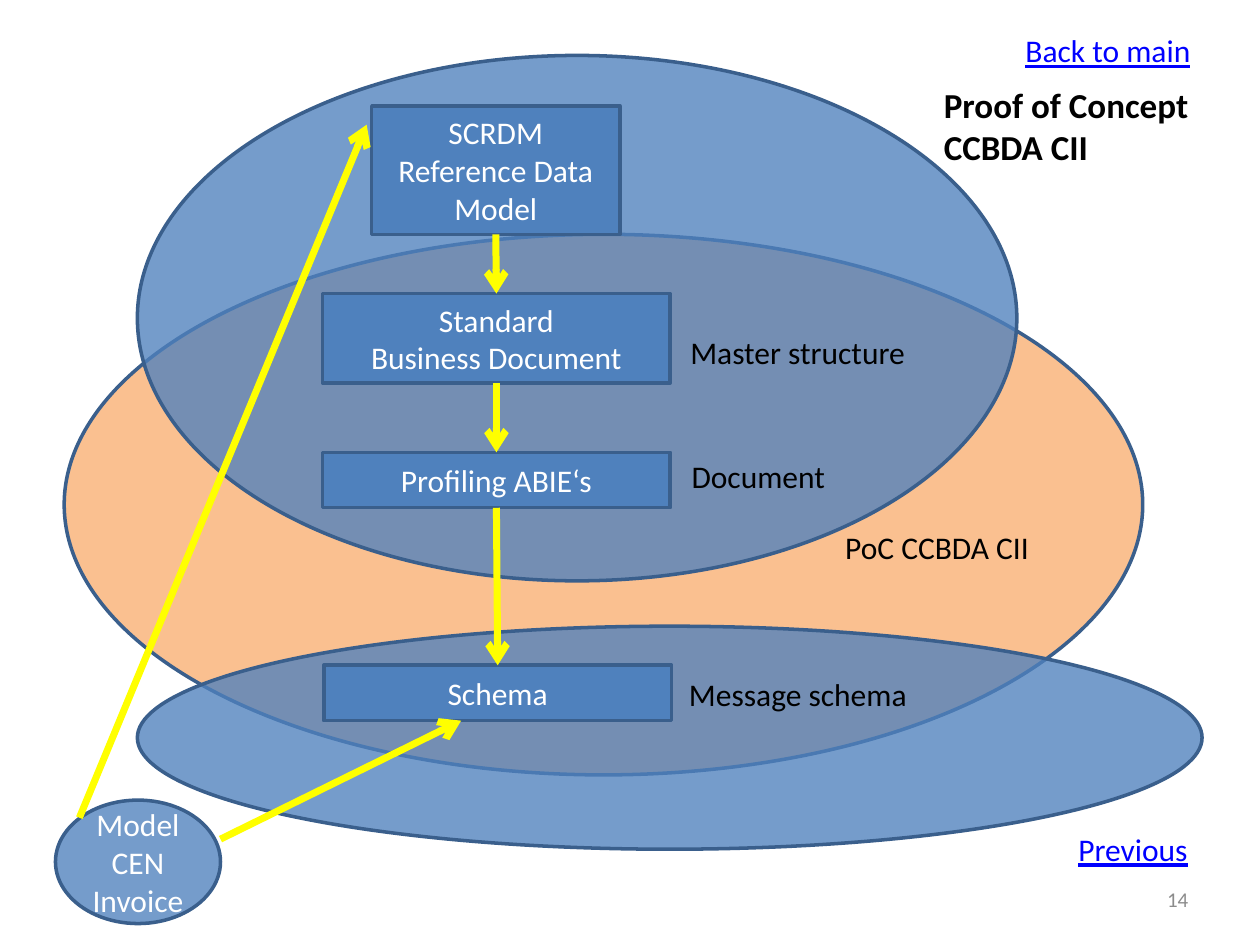
from lxml.etree import SubElement
from pptx import Presentation
from pptx.dml.color import RGBColor
from pptx.enum.shapes import MSO_CONNECTOR, MSO_SHAPE
from pptx.enum.text import MSO_ANCHOR, MSO_AUTO_SIZE, PP_ALIGN
from pptx.oxml.ns import qn
from pptx.util import Inches, Pt

FONT = "Calibri"
BLUE = RGBColor(0x4F, 0x81, 0xBD)
OUTLINE = RGBColor(0x3A, 0x5F, 0x8C)
ORANGE = RGBColor(0xFA, 0xC0, 0x90)
YELLOW = RGBColor(0xFF, 0xFF, 0x00)
LINK = RGBColor(0x00, 0x00, 0xFF)
GRAY = RGBColor(0x8C, 0x8C, 0x8C)
BLACK = RGBColor(0x00, 0x00, 0x00)
WHITE = RGBColor(0xFF, 0xFF, 0xFF)


def write_text(shape, paragraphs, color, size=18, align=PP_ALIGN.LEFT, bold=False, underline=False):
    """Fill a shape with evenly formatted paragraphs."""
    frame = shape.text_frame
    for index, text in enumerate(paragraphs):
        para = frame.add_paragraph() if index else frame.paragraphs[0]
        para.text = text
        para.alignment = align
        font = para.font
        font.name, font.size, font.bold = FONT, Pt(size), bold
        font.underline = underline
        font.color.rgb = color


def add_node(page, kind, place, fill, paragraphs=(), opacity=100):
    """Add an outlined shape with centred white text."""
    node = page.shapes.add_shape(kind, *map(Inches, place))
    node.shadow.inherit = False
    node.fill.solid()
    node.fill.fore_color.rgb = fill
    node.line.color.rgb = OUTLINE
    node.line.width = Pt(2)
    if opacity < 100:
        color = node.fill._xPr.find(qn("a:solidFill"))[0]
        SubElement(color, qn("a:alpha"), val=str(opacity * 1000))
    node.text_frame.vertical_anchor = MSO_ANCHOR.MIDDLE
    write_text(node, paragraphs, WHITE, align=PP_ALIGN.CENTER)
    return node


def add_label(page, place, text, color=BLACK, wrap=True, **style):
    """Add a one-line text box."""
    box = page.shapes.add_textbox(*map(Inches, place))
    box.text_frame.word_wrap = wrap
    write_text(box, [text], color, **style)
    return box


def add_arrow(page, start, end):
    """Add a thick yellow arrow between two points."""
    arrow = page.shapes.add_connector(MSO_CONNECTOR.STRAIGHT, *map(Inches, (*start, *end)))
    arrow.line.color.rgb = YELLOW
    arrow.line.width = Pt(4)
    SubElement(arrow.line._get_or_add_ln(), qn("a:tailEnd"), type="arrow")
    SubElement(arrow._element.spPr, qn("a:effectLst"))
    return arrow


def place_title(page):
    """Move and format the title placeholder."""
    title = page.shapes.title
    title.left, title.top, title.width, title.height = map(Inches, (7.39, 0.61, 2.16, 0.77))
    frame = title.text_frame
    frame.word_wrap = False
    frame.auto_size = MSO_AUTO_SIZE.NONE
    frame.vertical_anchor = MSO_ANCHOR.TOP
    write_text(title, ["Proof of Concept", "CCBDA CII"], BLACK, size=20, bold=True)


def main():
    """Build the slide and save the deck."""
    deck = Presentation()
    deck.slide_width, deck.slide_height = Inches(10), Inches(7.5)
    page = deck.slides.add_slide(deck.slide_layouts[5])
    place_title(page)

    add_node(page, MSO_SHAPE.OVAL, (0.51, 1.86, 8.56, 4.29), ORANGE)
    for place in ((1.09, 4.97, 8.45, 1.77), (1.09, 0.44, 6.98, 4.17)):
        add_node(page, MSO_SHAPE.OVAL, place, BLUE, opacity=78)

    steps = [
        ((2.95, 0.84, 1.97, 1.02), ["SCRDM", "Reference Data Model"]),
        ((2.56, 2.33, 2.76, 0.71), ["Standard\vBusiness Document"]),
        ((2.56, 3.59, 2.76, 0.44), ["Profiling ABIE‘s"]),
        ((2.57, 5.28, 2.76, 0.44), ["Schema"]),
    ]
    boxes = [add_node(page, MSO_SHAPE.RECTANGLE, place, BLUE, text) for place, text in steps]
    for upper, lower in zip(boxes, boxes[1:]):
        arrow = add_arrow(page, (0, 0), (1, 1))
        arrow.begin_connect(upper, 2)
        arrow.end_connect(lower, 0)

    add_label(page, (5.38, 2.59, 1.98, 0.4), "Master structure", wrap=False)
    add_label(page, (5.39, 3.58, 2.44, 0.4), "Document")
    add_label(page, (6.61, 4.14, 2.44, 0.4), "PoC CCBDA CII")
    add_label(page, (5.37, 5.31, 2.44, 0.4), "Message schema")

    add_node(page, MSO_SHAPE.OVAL, (0.44, 6.35, 1.31, 0.98), BLUE, ["Model", "CEN\vInvoice"], opacity=78)
    add_arrow(page, (1.75, 6.66), (3.66, 5.72))
    add_arrow(page, (0.63, 6.49), (2.91, 0.99))

    number = add_label(page, (7.2, 6.94, 2.33, 0.4), "14", GRAY, size=12, align=PP_ALIGN.RIGHT)
    number.text_frame.vertical_anchor = MSO_ANCHOR.MIDDLE
    add_label(page, (8.46, 6.54, 1.08, 0.4), "Previous", LINK, wrap=False, underline=True)
    add_label(page, (8.04, 0.2, 1.52, 0.4), "Back to main", LINK, wrap=False, underline=True)
    deck.save("out.pptx")


if __name__ == "__main__":
    main()
